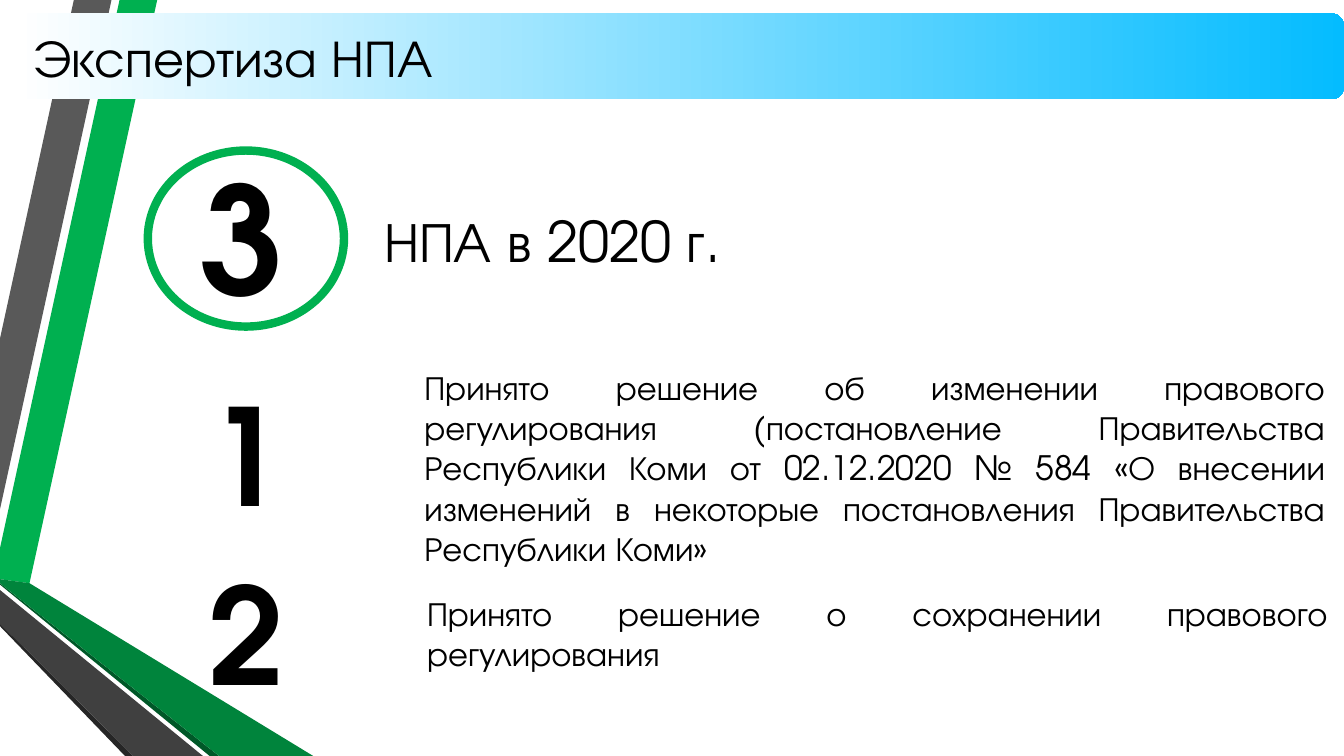
from pptx import Presentation
from pptx.dml.color import RGBColor
from pptx.enum.shapes import MSO_SHAPE
from pptx.enum.text import MSO_ANCHOR, PP_ALIGN
from pptx.util import Pt

PX = 4572
FONT = "TeX Gyre Adventor"
LEFT, CENTER, JUSTIFY = PP_ALIGN.LEFT, PP_ALIGN.CENTER, PP_ALIGN.JUSTIFY
MIDDLE, TOP = MSO_ANCHOR.MIDDLE, MSO_ANCHOR.TOP
ROUNDED, OVAL = MSO_SHAPE.ROUNDED_RECTANGLE, MSO_SHAPE.OVAL
COLORS = {
    "black": "000000", "white": "FFFFFF", "blue": "04BCFF",
    "green": "00B050", "mid green": "00843C", "dark green": "005828",
    "gray": "595959", "dark gray": "404040", "charcoal": "262626",
}


def color(name):
    return RGBColor.from_string(COLORS[name])


def write(shape, text, size, align, bold=False, anchor=TOP):
    frame = shape.text_frame
    frame.word_wrap = True
    frame.vertical_anchor = anchor
    frame.text = text
    para = frame.paragraphs[0]
    para.alignment = align
    font = para.runs[0].font
    font.name = FONT
    font.size = Pt(size)
    font.bold = bold
    font.color.rgb = color("black")


deck = Presentation()
deck.slide_width = 2000 * PX
deck.slide_height = 1125 * PX
page = deck.slides.add_slide(deck.slide_layouts[6])

ribbons = [
    ("green", [(0, 816), (0, 862), (44, 868), (234, 0), (178, 0)]),
    ("gray", [(166, 0), (110, 0), (0, 504), (0, 758)]),
    ("charcoal", [(0, 928), (0, 932), (186, 1125), (198, 1125)]),
    ("dark green", [(0, 868), (0, 870), (312, 1125), (326, 1125)]),
    ("mid green", [(0, 868), (326, 1125), (466, 1125), (44, 868), (0, 862)]),
    ("dark gray", [(0, 928), (198, 1125), (302, 1125), (0, 878)]),
]
for name, points in ribbons:
    builder = page.shapes.build_freeform(*points[0], scale=PX)
    builder.add_line_segments(points[1:], close=True)
    ribbon = builder.convert_to_shape()
    ribbon.shadow.inherit = False
    ribbon.fill.solid()
    ribbon.fill.fore_color.rgb = color(name)
    ribbon.line.fill.background()

banner = page.shapes.add_shape(ROUNDED, 24 * PX, 20 * PX, 1976 * PX, 128 * PX)
banner.adjustments[0] = 0.15
banner.shadow.inherit = False
banner.line.fill.background()
banner.fill.gradient()
banner.fill.gradient_angle = 0
for stop, name, position in zip(banner.fill.gradient_stops, ("white", "blue"), (0, 1)):
    stop.color.rgb = color(name)
    stop.position = position
write(banner, "Экспертиза НПА", 28, LEFT, anchor=MIDDLE)

texts = [
    ("1", 248, 544, 236, 268, 72, CENTER, True),
    ("2", 256, 810, 220, 268, 72, CENTER, True),
    ("НПА в 2020 г.", 552, 298, 1448, 124, 30, JUSTIFY, False),
    ("3", 220, 208, 280, 294, 80, CENTER, True),
    ("Принято решение об изменении правового регулирования "
     "(постановление Правительства Республики Коми от 02.12.2020 № 584 "
     "«О внесении изменений в некоторые постановления Правительства "
     "Республики Коми»", 612, 536, 1380, 392, 18, JUSTIFY, False),
    ("Принято решение о сохранении правового регулирования",
     616, 872, 1380, 144, 18, JUSTIFY, False),
]
for text, left, top, width, height, size, align, bold in texts:
    box = page.shapes.add_textbox(left * PX, top * PX, width * PX, height * PX)
    write(box, text, size, align, bold)

ring = page.shapes.add_shape(OVAL, 220 * PX, 224 * PX, 292 * PX, 262 * PX)
ring.shadow.inherit = False
ring.fill.background()
ring.line.color.rgb = color("green")
ring.line.width = Pt(4.5)

deck.save("out.pptx")
